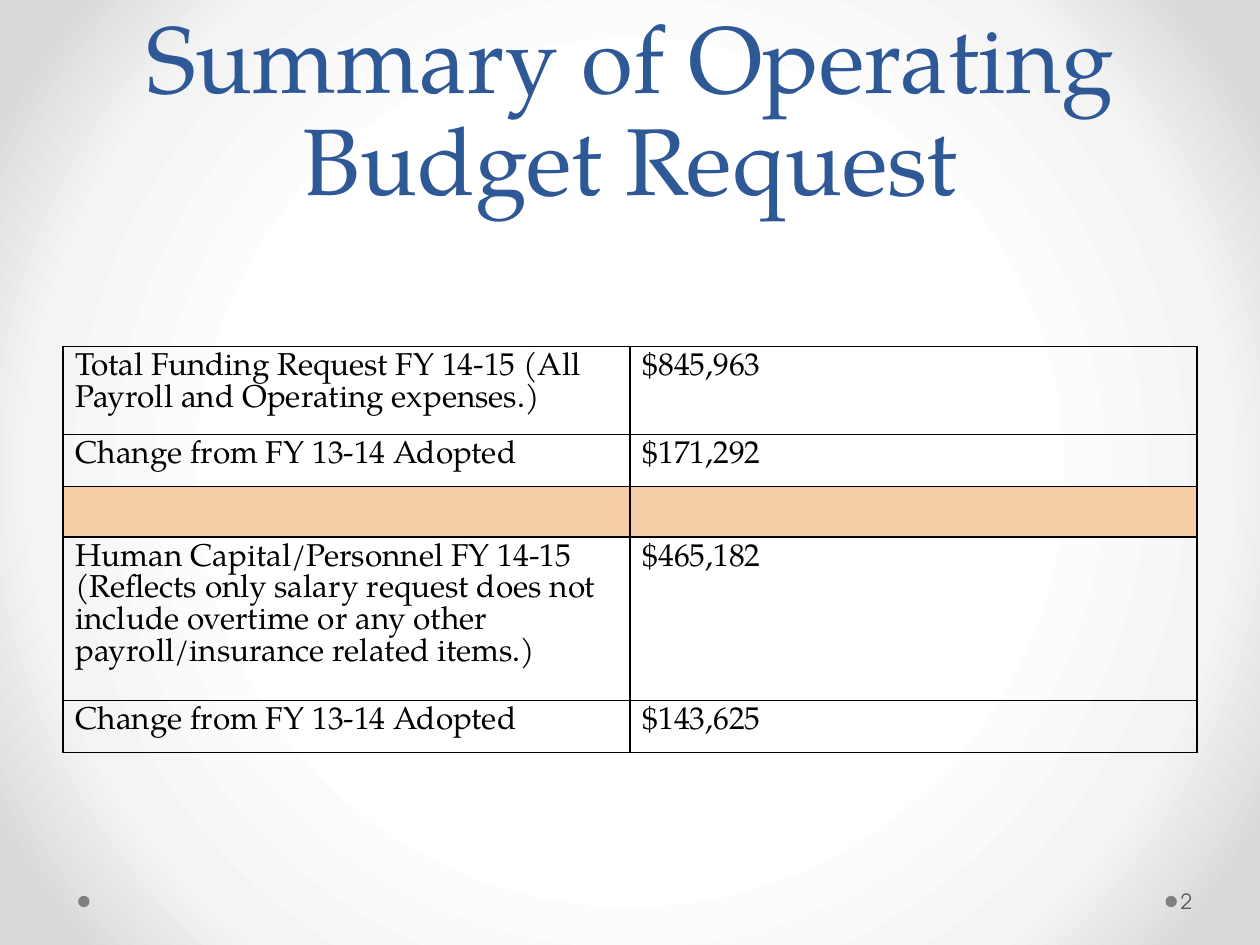
from lxml import etree
from pptx import Presentation
from pptx.dml.color import RGBColor
from pptx.enum.shapes import MSO_SHAPE
from pptx.enum.text import MSO_ANCHOR, PP_ALIGN
from pptx.oxml import parse_xml
from pptx.oxml.ns import nsdecls, qn
from pptx.util import Inches, Pt

BLUE = RGBColor(0x2F, 0x58, 0x97)
BLACK = RGBColor(0, 0, 0)
GRAY = RGBColor(0x80, 0x80, 0x80)
DARK_GRAY = RGBColor(0x59, 0x59, 0x59)
PEACH = RGBColor(0xF5, 0xCE, 0xA7)
OVAL = MSO_SHAPE.OVAL
CENTER, LEFT = PP_ALIGN.CENTER, PP_ALIGN.LEFT
BOTTOM, MIDDLE = MSO_ANCHOR.BOTTOM, MSO_ANCHOR.MIDDLE
SERIF, SANS = "TeX Gyre Pagella", "TeX Gyre Adventor"


def write(tf, text, size=18, font=SERIF, color=BLACK, align=LEFT, spacing=None):
    tf.word_wrap = True
    p = tf.paragraphs[0]
    p.alignment = align
    if spacing:
        p.line_spacing = Pt(spacing)
    if not text:
        # An empty cell still takes its height from the font
        end = p._p.get_or_add_endParaRPr()
        end.set("sz", str(size * 100))
        etree.SubElement(end, qn("a:latin"), typeface=font)
        return
    r = p.add_run()
    r.text = text
    r.font.size = Pt(size)
    r.font.name = font
    r.font.color.rgb = color


def add_borders(cell):
    tcPr = cell._tc.get_or_add_tcPr()
    for i, side in enumerate(("lnL", "lnR", "lnT", "lnB")):
        tcPr.insert(i, parse_xml(
            f'<a:{side} {nsdecls("a")} w="12700"><a:solidFill>'
            f'<a:srgbClr val="{BLACK}"/></a:solidFill></a:{side}>'))


prs = Presentation()
prs.slide_width, prs.slide_height = Inches(10), Inches(7.5)
s = prs.slides.add_slide(prs.slide_layouts[6])

# Radial background
s.background.fill.solid()
bgPr = s._element.cSld.bg.bgPr
stops = "".join(
    f'<a:gs pos="{pos * 1000}"><a:srgbClr val="{color}"/></a:gs>'
    for pos, color in ((50, "FFFFFF"), (76, "F4F4F4"), (92, "DADADA")))
bgPr.replace(bgPr.find(qn("a:solidFill")), parse_xml(
    f'<a:gradFill {nsdecls("a")} rotWithShape="1"><a:gsLst>{stops}</a:gsLst>'
    '<a:path path="circle"><a:fillToRect l="50000" t="50000" r="50000" b="50000"/>'
    '</a:path></a:gradFill>'))

# Footer dots
for x in (9.25, 0.62):
    dot = s.shapes.add_shape(OVAL, Inches(x), Inches(7.11), Inches(0.09), Inches(0.09))
    dot.shadow.inherit = False
    dot.fill.solid()
    dot.fill.fore_color.rgb = GRAY
    dot.line.fill.background()

# Title
tf = s.shapes.add_textbox(Inches(0.5), 0, Inches(9), Inches(1.75)).text_frame
tf.vertical_anchor = BOTTOM
write(tf, "Summary of Operating Budget Request", size=54, color=BLUE,
      align=CENTER, spacing=58)

# Budget table: label, amount, row height
rows = [
    ("Total Funding Request FY 14-15 (All Payroll and Operating expenses.)",
     "$845,963", 0.6),
    ("Change from FY 13-14 Adopted", "$171,292", 0.41),
    ("", "", 0.35),
    ("Human Capital/Personnel FY 14-15 (Reflects only salary request does not "
     "include overtime or any other payroll/insurance related items.)",
     "$465,182", 1.11),
    ("Change from FY 13-14 Adopted", "$143,625", 0.41),
]
height = sum(row[2] for row in rows)
table = s.shapes.add_table(len(rows), 2, Inches(0.5), Inches(2.75),
                           Inches(9), Inches(height)).table
table.first_row = table.horz_banding = False
for i, (label, amount, row_height) in enumerate(rows):
    table.rows[i].height = Inches(row_height)
    for j, text in enumerate((label, amount)):
        cell = table.cell(i, j)
        write(cell.text_frame, text)
        if text:
            cell.fill.background()
        else:
            cell.fill.solid()
            cell.fill.fore_color.rgb = PEACH
        add_borders(cell)

# Page number
tf = s.shapes.add_textbox(Inches(9.34), Inches(6.95), Inches(0.61), Inches(0.4)).text_frame
tf.vertical_anchor = MIDDLE
tf.margin_left, tf.margin_right = Inches(0.03), Inches(0.05)
write(tf, "2", size=12, font=SANS, color=DARK_GRAY)

prs.save("out.pptx")
